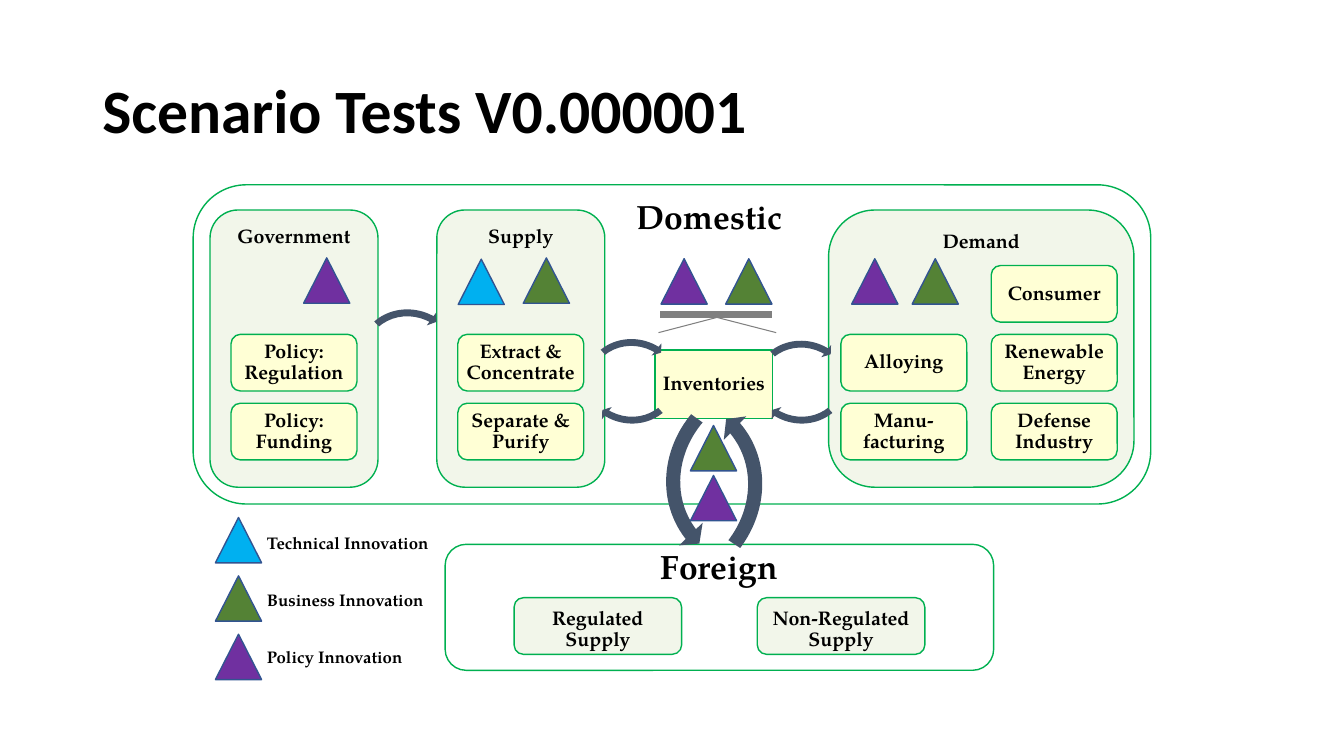
from dataclasses import dataclass

from lxml.etree import SubElement
from pptx import Presentation
from pptx.dml.color import RGBColor
from pptx.enum.shapes import MSO_CONNECTOR, MSO_SHAPE
from pptx.enum.text import MSO_ANCHOR, PP_ALIGN
from pptx.oxml.ns import qn
from pptx.util import Inches, Pt


@dataclass(frozen=True)
class Theme:
    heading_font: str = "Calibri"
    body_font: str = "TeX Gyre Pagella"
    title_size: int = 44
    zone_size: int = 24
    label_size: int = 14
    legend_size: int = 12
    text: str = "000000"
    border: str = "00B050"
    panel: str = "F2F6EA"
    card: str = "FFFFD5"
    arrow: str = "44546A"
    bar: str = "808080"
    triangle_line: str = "325491"


THEME = Theme()

# Grid of 160 columns by 90 rows; every length below is in grid cells
COLUMNS, ROWS = 160, 90
CELL = Inches(1 / 12)

# Content: boxes as (text, left, top, width, height)
TITLE = ("Scenario Tests V0.000001", 11, 4.8, 138, 17.4)
DOMESTIC = ("Domestic", 23, 22, 114, 38)
FOREIGN = ("Foreign", 53, 64.8, 65.3, 15)
INVENTORIES = ("Inventories", 78, 41.65, 14, 8.15)
PANELS = [
    ("Government", 25, 25, 20, 33),
    ("Supply", 52, 25, 20, 33),
    ("Demand", 98.65, 25, 36.35, 33),
    ("Regulated\nSupply", 61.2, 71.15, 19.95, 6.75),
    ("Non-Regulated Supply", 90.15, 71.15, 19.95, 6.75),
]

# Cards: column position -> texts of the three rows
CARD_TOP, CARD_STEP, CARD_WIDTH, CARD_HEIGHT = 31.6, 8.2, 15, 6.75
CARDS = {
    27.5: (None, "Policy: Regulation", "Policy: Funding"),
    54.5: (None, "Extract & Concentrate", "Separate & Purify"),
    100.1: (None, "Alloying", "Manu-facturing"),
    118: ("Consumer", "Renewable Energy", "Defense Industry"),
}

# Innovations: triangle colour and positions on the map
INNOVATIONS = [
    ("Technical Innovation", "00B0F0", [(54.55, 30.85)]),
    ("Business Innovation", "548235", [(62.3, 30.7), (86.4, 30.8), (108.6, 30.8), (82.2, 50.65)]),
    ("Policy Innovation", "7030A0", [(36.15, 30.7), (78.7, 30.8), (101.4, 30.8), (82.2, 56.6)]),
]
TRIANGLE = (5.5, 5.4)
LEGEND_TRIANGLE, LEGEND_TEXT = (25.65, 61.6), (30.6, 62.8)
LEGEND_STEP, LEGEND_TEXT_STEP = 6.95, 6.8

# Curved arrows: (left, top, size, rotation, flips)
LARGE, MEDIUM, SMALL = (28.2, 25.9), (12.7, 13.4), (12.4, 13)
ARROW_ADJUSTMENTS = (0.065, 4.3, 104.891, 148.378, 0.075)
ARROWS = [
    (77.9, 43.4, LARGE, 328.6, ""),
    (64, 45.7, LARGE, 326, "HV"),
    (42.4, 36, MEDIUM, 293.8, "H"),
    (69.2, 39.6, SMALL, 296.3, "H"),
    (68.8, 38.2, SMALL, 296.3, "V"),
    (89.4, 39.8, SMALL, 296.3, "H"),
    (89, 38.2, SMALL, 296.3, "V"),
]

# Bracket over the inventories: (start, end, line width)
BRACKET = [
    ((78.6, 37.45), (91.9, 37.45), 4.5),
    ((78.4, 39.6), (85.3, 37.8), 0.75),
    ((92.4, 39.6), (85.4, 37.8), 0.75),
]


def cells(*values):
    return [round(value * CELL) for value in values]


def write(shape, text, size=THEME.label_size, font=THEME.body_font,
          align=PP_ALIGN.CENTER, anchor=MSO_ANCHOR.TOP, spacing=0.9,
          insets=(0, 0, 0, 0), wrap=True):
    """Fill a shape with formatted text; insets are left, top, right, bottom in cells."""
    frame = shape.text_frame
    frame.word_wrap = wrap
    frame.vertical_anchor = anchor
    (frame.margin_left, frame.margin_top,
     frame.margin_right, frame.margin_bottom) = cells(*insets)
    frame.text = text
    for paragraph in frame.paragraphs:
        paragraph.alignment = align
        paragraph.line_spacing = spacing
        paragraph.font.size = Pt(size)
        paragraph.font.name = font
        paragraph.font.bold = True
        paragraph.font.color.rgb = RGBColor.from_string(THEME.text)


def add_shape(slide, kind, left, top, width, height, fill=None, line=None):
    shape = slide.shapes.add_shape(kind, *cells(left, top, width, height))
    shape.shadow.inherit = False
    if fill:
        shape.fill.solid()
        shape.fill.fore_color.rgb = RGBColor.from_string(fill)
    else:
        shape.fill.background()
    if line:
        shape.line.color.rgb = RGBColor.from_string(line)
        shape.line.width = Pt(1)
    else:
        shape.line.fill.background()
    return shape


def add_box(slide, box, fill=None, kind=MSO_SHAPE.ROUNDED_RECTANGLE, **text_format):
    text, *place = box
    write(add_shape(slide, kind, *place, fill, THEME.border), text, **text_format)


def add_label(slide, box, **text_format):
    text, *place = box
    write(slide.shapes.add_textbox(*cells(*place)), text,
          insets=(1.2, 0.6, 1.2, 0.6), align=PP_ALIGN.LEFT, **text_format)


def add_triangle(slide, position, color):
    add_shape(slide, MSO_SHAPE.ISOSCELES_TRIANGLE, *position, *TRIANGLE,
              color, THEME.triangle_line)


def add_arrow(slide, left, top, size, rotation, flips):
    shape = add_shape(slide, MSO_SHAPE.LEFT_CIRCULAR_ARROW, left, top, *size, THEME.arrow)
    for index, value in enumerate(ARROW_ADJUSTMENTS):
        shape.adjustments[index] = value
    shape.rotation = rotation
    for axis in flips:
        shape.element.spPr.find(qn("a:xfrm")).set("flip" + axis, "1")


def add_line(slide, start, end, width):
    line = slide.shapes.add_connector(MSO_CONNECTOR.STRAIGHT, *cells(*start, *end))
    line.line.color.rgb = RGBColor.from_string(THEME.bar)
    line.line.width = Pt(width)
    SubElement(line.element.spPr, qn("a:effectLst"))


def main():
    presentation = Presentation()
    presentation.slide_width, presentation.slide_height = cells(COLUMNS, ROWS)
    slide = presentation.slides.add_slide(presentation.slide_layouts[6])

    # Title
    add_label(slide, TITLE, size=THEME.title_size, font=THEME.heading_font,
              anchor=MSO_ANCHOR.MIDDLE)

    # Zones, panels and cards
    add_box(slide, DOMESTIC, size=THEME.zone_size, insets=(9, 0, 0, 0))
    add_box(slide, FOREIGN, size=THEME.zone_size)
    for panel in PANELS:
        add_box(slide, panel, THEME.panel, insets=(0, 1, 0, 0))
    for left, texts in CARDS.items():
        for row, text in enumerate(texts):
            if text:
                card = (text, left, CARD_TOP + row * CARD_STEP, CARD_WIDTH, CARD_HEIGHT)
                add_box(slide, card, THEME.card, anchor=MSO_ANCHOR.MIDDLE)
    add_box(slide, INVENTORIES, THEME.card, MSO_SHAPE.RECTANGLE, anchor=MSO_ANCHOR.MIDDLE)

    # Flows and bracket
    for arrow in ARROWS:
        add_arrow(slide, *arrow)
    for line in BRACKET:
        add_line(slide, *line)

    # Innovation triangles and their legend
    for row, (name, color, positions) in enumerate(INNOVATIONS):
        legend_position = (LEGEND_TRIANGLE[0], LEGEND_TRIANGLE[1] + row * LEGEND_STEP)
        for position in [*positions, legend_position]:
            add_triangle(slide, position, color)
        label = (name, LEGEND_TEXT[0], LEGEND_TEXT[1] + row * LEGEND_TEXT_STEP, 22, 3.6)
        add_label(slide, label, size=THEME.legend_size, spacing=1, wrap=False)

    presentation.save("out.pptx")


if __name__ == "__main__":
    main()
